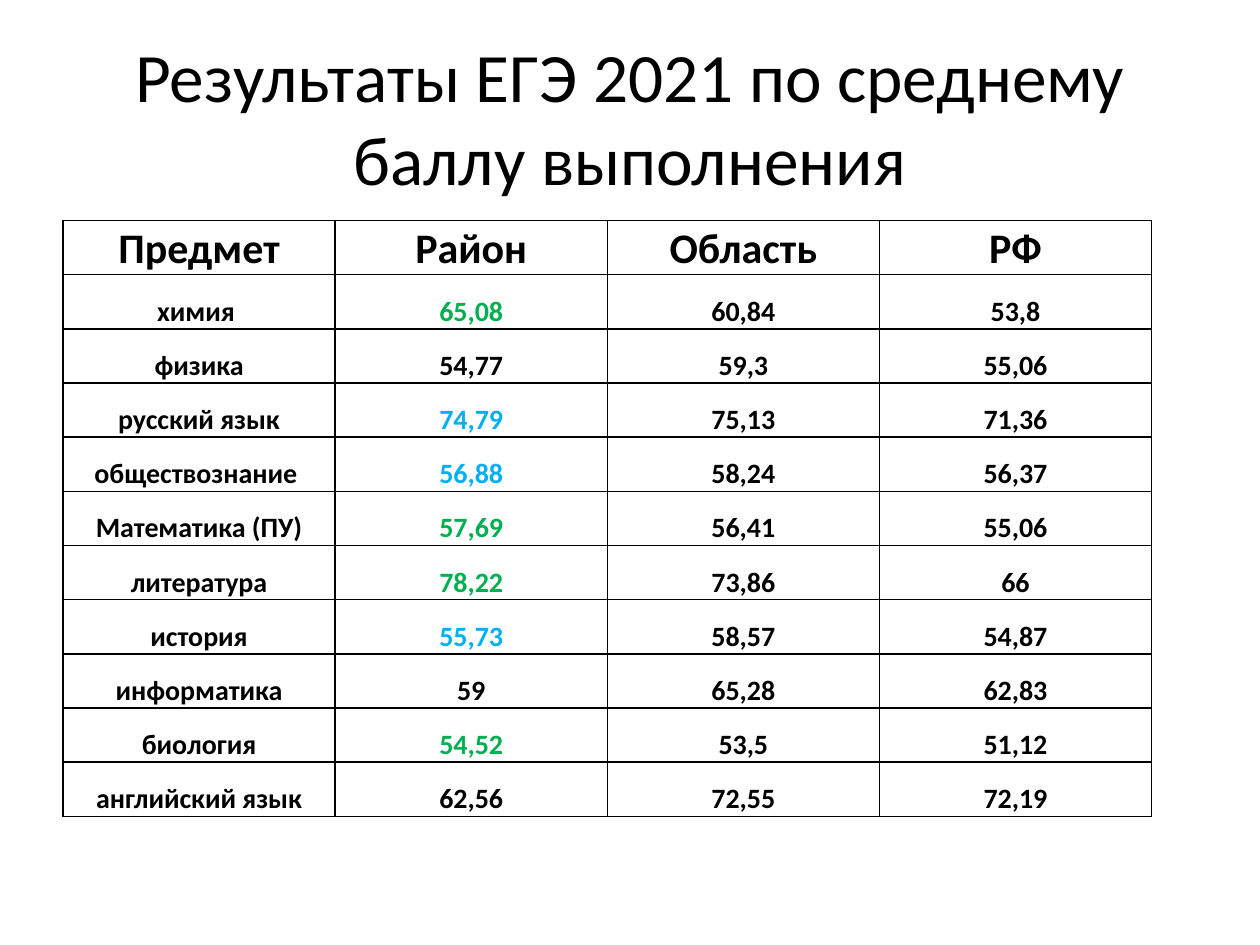
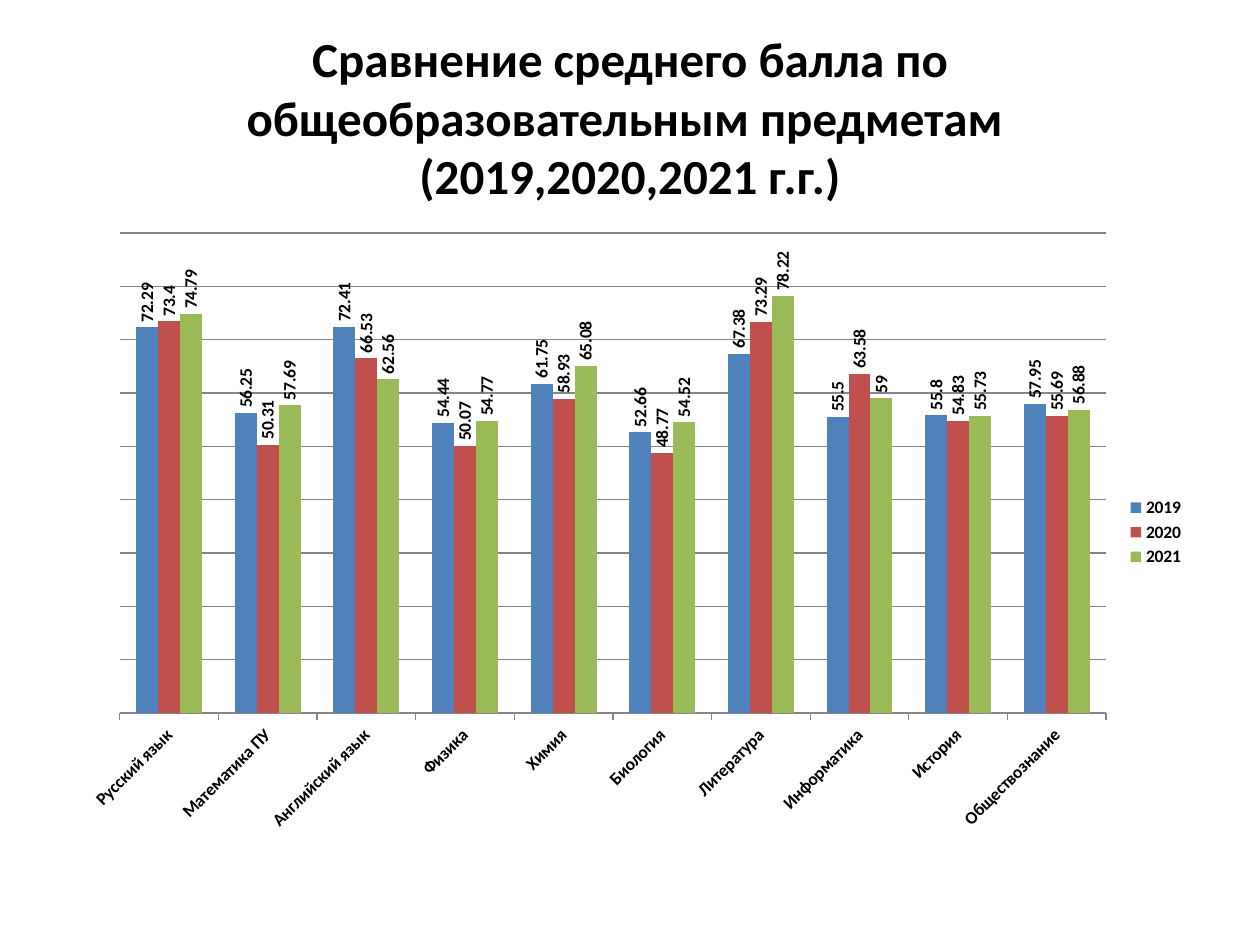
from lxml import etree
from pptx import Presentation
from pptx.chart.data import CategoryChartData
from pptx.dml.color import RGBColor
from pptx.enum import chart as ch, text as tx
from pptx.oxml import parse_xml
from pptx.oxml.ns import nsdecls, qn
from pptx.util import Inches, Pt

FONT = "Calibri"
BLACK = RGBColor(0x00, 0x00, 0x00)
GREEN = RGBColor(0x00, 0xB0, 0x50)
SKY = RGBColor(0x00, 0xB0, 0xF0)
GRAY = RGBColor(0x86, 0x86, 0x86)
BARS = [
    RGBColor(0x4F, 0x81, 0xBD),
    RGBColor(0xC0, 0x50, 0x4D),
    RGBColor(0x9B, 0xBB, 0x59),
]

HEADS = ["Предмет", "Район", "Область", "РФ"]
SCORES = [
    ("химия ", "65,08", "60,84", "53,8"),
    ("физика", "54,77", "59,3", "55,06"),
    ("русский язык", "74,79", "75,13", "71,36"),
    ("обществознание ", "56,88", "58,24", "56,37"),
    ("Математика (ПУ)", "57,69", "56,41", "55,06"),
    ("литература", "78,22", "73,86", "66"),
    ("история", "55,73", "58,57", "54,87"),
    ("информатика", "59", "65,28", "62,83"),
    ("биология", "54,52", "53,5", "51,12"),
    ("английский язык", "62,56", "72,55", "72,19"),
]
YEARS = ["2019", "2020", "2021"]
MEANS = [
    ("Русский язык", 72.29, 73.4, 74.79),
    ("Математика ПУ", 56.25, 50.31, 57.69),
    ("Английский язык", 72.41, 66.53, 62.56),
    ("Физика", 54.44, 50.07, 54.77),
    ("Химия", 61.75, 58.93, 65.08),
    ("Биология", 52.66, 48.77, 54.52),
    ("Литература", 67.38, 73.29, 78.22),
    ("Информатика", 55.5, 63.58, 59),
    ("История", 55.8, 54.83, 55.73),
    ("Обществознание", 57.95, 55.69, 56.88),
]


def set_font(font, size, color=BLACK, bold=True):
    """Give a font its face, size, colour and weight."""
    font.name = FONT
    font.size = Pt(size)
    font.bold = bold
    font.color.rgb = color


def add_slide(deck, title, size, bold):
    """Add a title-only slide with its title placed and styled."""
    slide = deck.slides.add_slide(deck.slide_layouts[5])
    head = slide.shapes.title
    head.left, head.top = Inches(0.5), Inches(0.3)
    head.width, head.height = Inches(9), Inches(1.25)
    frame = head.text_frame
    frame.text = title
    frame.word_wrap = True
    frame.auto_size = tx.MSO_AUTO_SIZE.NONE
    frame.vertical_anchor = tx.MSO_ANCHOR.MIDDLE
    para = frame.paragraphs[0]
    para.alignment = tx.PP_ALIGN.CENTER
    for run in para.runs:
        set_font(run.font, size, bold=bold)
    return slide


def add_edges(cell):
    """Draw a thin black line on all four sides of a cell."""
    props = cell._tc.get_or_add_tcPr()
    for side in ("lnL", "lnR", "lnT", "lnB"):
        line = etree.SubElement(props, qn(f"a:{side}"), w=str(Pt(1)))
        fill = etree.SubElement(line, qn("a:solidFill"))
        etree.SubElement(fill, qn("a:srgbClr"), val=str(BLACK))


def fill_cell(cell, words, size, color):
    """Write and style one table cell."""
    cell.text = words
    cell.vertical_anchor = tx.MSO_ANCHOR.BOTTOM
    cell.margin_left = cell.margin_right = cell.margin_top = Inches(0.01)
    cell.margin_bottom = 0
    add_edges(cell)
    cell.fill.background()
    para = cell.text_frame.paragraphs[0]
    para.alignment = tx.PP_ALIGN.CENTER
    set_font(para.runs[0].font, size, color)


def rank_color(row):
    """Pick green above region and country, blue above country only."""
    local, region, country = (float(v.replace(",", ".")) for v in row[1:])
    if local > max(region, country):
        return GREEN
    return SKY if local > country else BLACK


def add_scores(slide):
    """Add the table of mean scores by subject."""
    rows = [HEADS, *SCORES]
    table = slide.shapes.add_table(
        len(rows), len(HEADS), Inches(0.5), Inches(1.75), Inches(8.64), Inches(4.73)
    ).table
    table.first_row = table.horz_banding = False
    for r, row in enumerate(rows):
        for c, words in enumerate(row):
            color = rank_color(row) if r and c == 1 else BLACK
            fill_cell(table.cell(r, c), words, 16 if r else 24, color)


def set_plot(chart, x, y, w, h):
    """Place the inner plot area by fractions of the chart."""
    area = chart.element.find(".//" + qn("c:plotArea"))
    for old in area.findall(qn("c:layout")):
        area.remove(old)
    area.insert(0, parse_xml(
        f'<c:layout {nsdecls("c")}><c:manualLayout><c:layoutTarget val="inner"/>'
        '<c:xMode val="edge"/><c:yMode val="edge"/>'
        f'<c:x val="{x}"/><c:y val="{y}"/><c:w val="{w}"/><c:h val="{h}"/>'
        '</c:manualLayout></c:layout>'
    ))


def turn_text(chart, part, angle):
    """Rotate the text of one kind of chart part by degrees."""
    for body in chart.element.xpath(f".//c:{part}/c:txPr/a:bodyPr"):
        body.set("rot", str(angle * 60000))
        body.set("vert", "horz")


def style_axes(chart):
    """Style the subject axis and the hidden score axis."""
    cats = chart.category_axis
    cats.major_tick_mark = ch.XL_TICK_MARK.OUTSIDE
    cats.format.line.color.rgb = GRAY
    set_font(cats.tick_labels.font, 10)
    vals = chart.value_axis
    vals.visible = False
    vals.minimum_scale, vals.maximum_scale, vals.major_unit = 0, 90, 10
    vals.has_major_gridlines = True
    grid = vals.major_gridlines.format.line
    grid.color.rgb = GRAY
    grid.width = Pt(0.75)


def style_bars(plot):
    """Colour the bars of each year and label their values."""
    plot.gap_width, plot.overlap = 150, 0
    plot.vary_by_categories = False
    for bars, color in zip(plot.series, BARS):
        bars.format.fill.solid()
        bars.format.fill.fore_color.rgb = color
        bars.invert_if_negative = False
        labels = bars.data_labels
        labels.show_value = True
        labels.position = ch.XL_LABEL_POSITION.OUTSIDE_END
        set_font(labels.font, 10)


def add_means(slide):
    """Add the chart of mean scores by subject and year."""
    names, *columns = zip(*MEANS)
    data = CategoryChartData()
    data.categories = names
    for year, values in zip(YEARS, columns):
        data.add_series(year, values)
    chart = slide.shapes.add_chart(
        ch.XL_CHART_TYPE.COLUMN_CLUSTERED,
        Inches(0.5), Inches(1.75), Inches(9), Inches(4.95), data,
    ).chart
    set_font(chart.font, 10, bold=False)
    chart.has_title = False
    chart.has_legend = True
    chart.legend.position = ch.XL_LEGEND_POSITION.RIGHT
    chart.legend.include_in_layout = False
    set_font(chart.legend.font, 10)
    style_axes(chart)
    style_bars(chart.plots[0])
    turn_text(chart, "dLbls", -90)
    turn_text(chart, "catAx", -45)
    set_plot(chart, 0.05, 0.02, 0.87, 0.77)


def main():
    """Build both slides and save the deck."""
    deck = Presentation()
    deck.slide_width, deck.slide_height = Inches(10), Inches(7.5)
    title = "Результаты ЕГЭ 2021 по среднему баллу выполнения"
    add_scores(add_slide(deck, title, 39.6, False))
    title = (
        "Сравнение среднего балла по общеобразовательным предметам "
        "\v(2019,2020,2021 г.г.)"
    )
    add_means(add_slide(deck, title, 28, True))
    deck.save("out.pptx")


if __name__ == "__main__":
    main()
